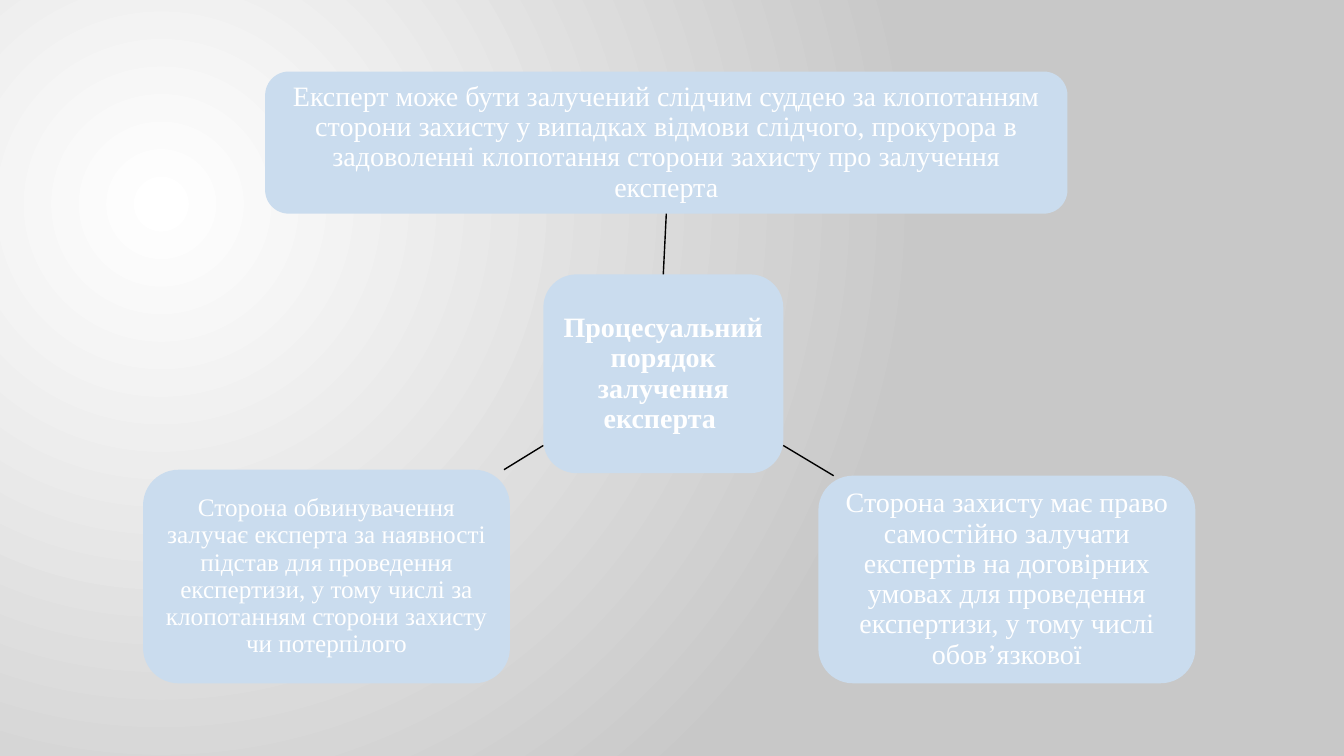
from dataclasses import dataclass

from lxml.etree import SubElement
from pptx import Presentation
from pptx.dml.color import RGBColor
from pptx.enum.shapes import MSO_CONNECTOR, MSO_SHAPE
from pptx.enum.text import MSO_ANCHOR, MSO_AUTO_SIZE, PP_ALIGN
from pptx.oxml import parse_xml
from pptx.oxml.ns import nsdecls, qn
from pptx.shapes.autoshape import Shape
from pptx.shapes.connector import Connector
from pptx.slide import Slide
from pptx.util import Pt

WHITE = RGBColor(0xFF, 0xFF, 0xFF)
GREY = RGBColor(0xC8, 0xC8, 0xC8)
BLACK = RGBColor(0x00, 0x00, 0x00)
PALE_BLUE = RGBColor(0xCA, 0xDC, 0xEE)
FONT = "Times New Roman"


@dataclass(frozen=True)
class Box:
    left: float
    top: float
    width: float
    height: float
    text: str = ""
    size: float = 20
    inset: float = 4.5


@dataclass(frozen=True)
class Link:
    x1: float
    y1: float
    x2: float
    y2: float


HUB = Box(388.1, 196, 171.4, 142)
TITLE = Box(395.1, 203, 157.4, 128, "Процесуальний порядок залучення експерта ")
COURT = Box(
    189.4, 51.1, 573.1, 101.5,
    "Експерт може бути залучений слідчим суддею за клопотанням сторони захисту "
    "у випадках відмови слідчого, прокурора в задоволенні клопотання сторони "
    "захисту про залучення експерта",
)
SIDES = [
    Box(
        584.6, 339.8, 269.3, 148.3,
        "Сторона захисту має право самостійно залучати експертів на договірних "
        "умовах для проведення експертизи, у тому числі обов’язкової",
    ),
    Box(
        102.2, 335.5, 262.1, 152.6,
        "Сторона обвинувачення залучає експерта за наявності підстав для "
        "проведення експертизи, у тому числі за клопотанням сторони захисту "
        "чи потерпілого",
        size=18, inset=3.8,
    ),
]
SIDE_LINKS = [Link(559.5, 318.2, 595.5, 339.8), Link(388.1, 318.2, 360, 335.5)]


def paint_background(s: Slide) -> None:
    fill = s.background.fill
    fill.gradient()
    for stop, color in zip(fill.gradient_stops, (WHITE, GREY)):
        stop.color.rgb = color
    grad = s.element.find(".//" + qn("a:gradFill"))
    grad.replace(
        grad.find(qn("a:lin")),
        parse_xml(
            f'<a:path {nsdecls("a")} path="circle">'
            '<a:fillToRect l="50000" t="55000" r="125000" b="100000"/></a:path>'
        ),
    )


def write_text(sp: Shape, box: Box, bold: bool = False) -> None:
    tf = sp.text_frame
    tf.word_wrap = True
    tf.auto_size = MSO_AUTO_SIZE.NONE
    tf.vertical_anchor = MSO_ANCHOR.MIDDLE
    tf.margin_left = tf.margin_right = Pt(box.inset)
    tf.margin_top = tf.margin_bottom = Pt(box.inset)
    tf.text = box.text
    p = tf.paragraphs[0]
    p.alignment = PP_ALIGN.CENTER
    p.line_spacing = 0.9
    p.font.name = FONT
    p.font.size = Pt(box.size)
    p.font.bold = bold
    p.font.color.rgb = WHITE


def add_box(s: Slide, box: Box) -> Shape:
    sp = s.shapes.add_shape(
        MSO_SHAPE.ROUNDED_RECTANGLE,
        Pt(box.left), Pt(box.top), Pt(box.width), Pt(box.height),
    )
    sp.shadow.inherit = False
    sp.fill.solid()
    sp.fill.fore_color.rgb = PALE_BLUE
    sp.line.fill.background()
    if box.text:
        write_text(sp, box)
    return sp


def add_link(s: Slide, link: Link) -> Connector:
    line = s.shapes.add_connector(
        MSO_CONNECTOR.STRAIGHT,
        Pt(link.x1), Pt(link.y1), Pt(link.x2), Pt(link.y2),
    )
    line.line.color.rgb = BLACK
    line.line.width = Pt(1)
    SubElement(line._element.spPr, qn("a:effectLst"))
    return line


def place_title(s: Slide, box: Box, hub: Shape) -> None:
    title = s.shapes.title
    title.left, title.top = Pt(box.left), Pt(box.top)
    title.width, title.height = Pt(box.width), Pt(box.height)
    write_text(title, box, bold=True)
    hub._element.addnext(title._element)


def main() -> None:
    prs = Presentation()
    prs.slide_width, prs.slide_height = Pt(960), Pt(540)
    s = prs.slides.add_slide(prs.slide_layouts.get_by_name("Title Only"))
    paint_background(s)

    hub = add_box(s, HUB)
    place_title(s, TITLE, hub)
    court = add_box(s, COURT)
    stem = add_link(s, Link(0, 0, 0, 0))
    stem.begin_connect(hub, 0)
    stem.end_connect(court, 2)
    for side, link in zip(SIDES, SIDE_LINKS):
        add_link(s, link)
        add_box(s, side)

    prs.save("out.pptx")


if __name__ == "__main__":
    main()
